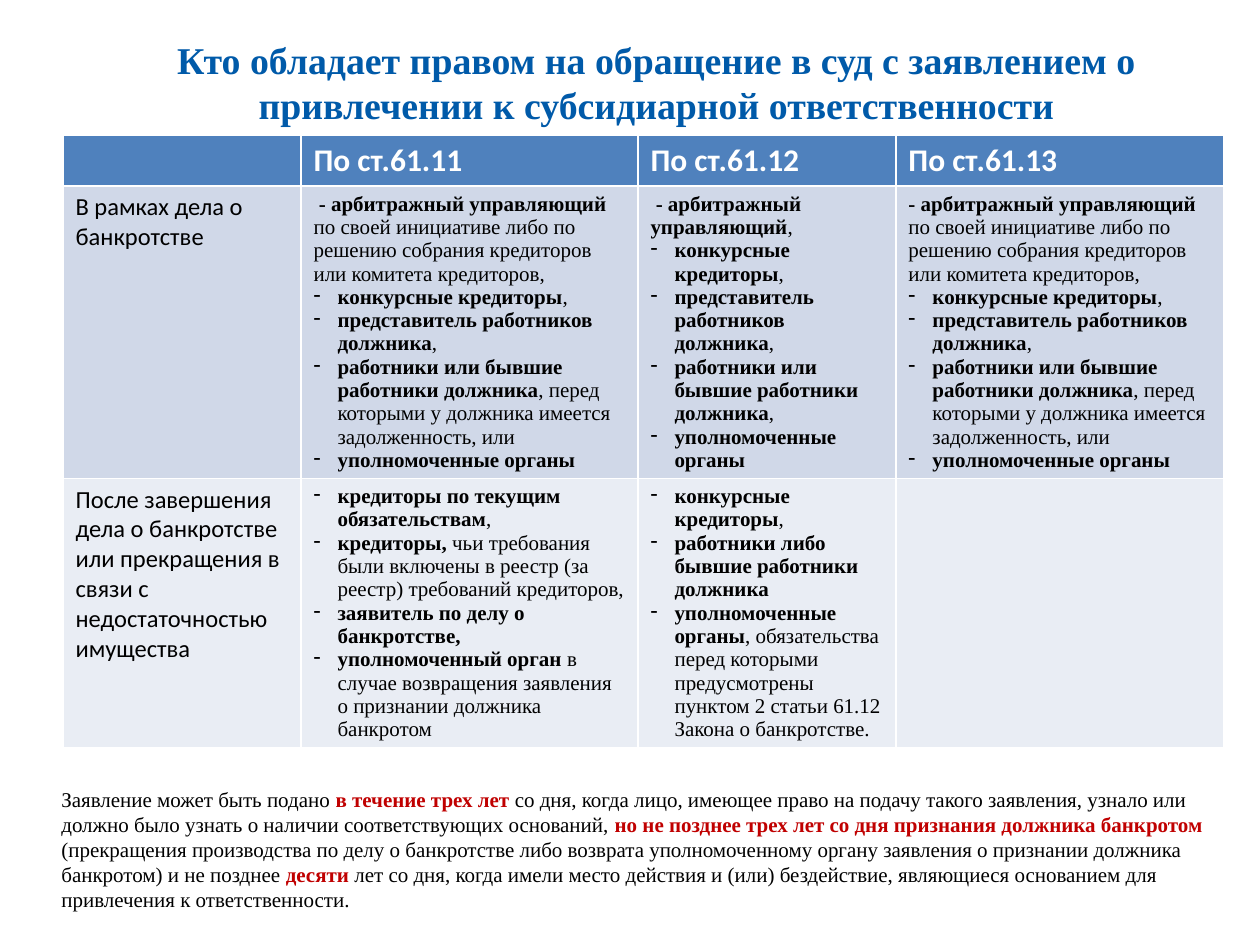
from pptx import Presentation
from pptx.dml.color import RGBColor
from pptx.enum.text import MSO_ANCHOR, MSO_AUTO_SIZE, PP_ALIGN
from pptx.oxml.ns import qn
from pptx.util import Pt
from lxml.etree import SubElement

SCALE = 914400 / 126
SERIF, SANS = "Times New Roman", "Calibri"
BLACK, WHITE, BLUE, RED = "000000", "FFFFFF", "005AA9", "C00000"
TITLE = {"name": SERIF, "size": Pt(21.6), "bold": True}
HEADER = {"name": SANS, "size": Pt(18), "bold": True}
STAGE = {"name": SANS, "size": Pt(14), "bold": False}
BODY = {"name": SERIF, "size": Pt(12), "bold": False}

COLUMNS = [238, 337, 258, 328]
ROWS = [51, 292, 269]
ROW_FILLS = ["4F81BD", "D0D8E8", "E9EDF4"]
HEADINGS = ["", "По ст.61.11", "По ст.61.12", "По ст.61.13"]
STAGES = [
    "В рамках дела о банкротстве",
    "После завершения дела о банкротстве или прекращения в связи с недостаточностью имущества",
]
INITIATIVE = "*- арбитражный управляющий* по своей инициативе либо по решению собрания кредиторов или комитета кредиторов,"
CREDITORS = "*конкурсные кредиторы*,"
DELEGATE = "*представитель работников должника*,"
WORKERS = "*работники или бывшие работники должника*,"
AGENCIES = "*уполномоченные органы*"
OWED = [CREDITORS, DELEGATE, WORKERS + " перед которыми у должника имеется задолженность, или", AGENCIES]
APPLICANTS = [
    [
        (" " + INITIATIVE, OWED),
        (" *- арбитражный управляющий*,", [CREDITORS, DELEGATE, WORKERS, AGENCIES]),
        (INITIATIVE, OWED),
    ],
    [
        ("", [
            "*кредиторы по текущим обязательствам*,",
            "*кредиторы, *чьи требования были включены в реестр (за реестр) требований кредиторов,",
            "*заявитель по делу о банкротстве,*",
            "*уполномоченный орган *в случае возвращения заявления о признании должника банкротом",
        ]),
        ("", [
            CREDITORS,
            "*работники либо бывшие работники должника*",
            AGENCIES + ", обязательства перед которыми предусмотрены пунктом 2 статьи 61.12 Закона о банкротстве.",
        ]),
        ("", []),
    ],
]
DEADLINE = (
    "Заявление может быть подано *в течение трех лет *со дня, когда лицо, имеющее право на подачу "
    "такого заявления, узнало или должно было узнать о наличии соответствующих оснований, "
    "*но не позднее трех лет со дня признания должника банкротом *(прекращения производства по делу "
    "о банкротстве либо возврата уполномоченному органу заявления о признании должника банкротом) "
    "и не позднее *десяти* лет со дня, когда имели место действия и (или) бездействие, являющиеся "
    "основанием для привлечения к ответственности."
)


def px(length):
    """Turn whole pixels into EMU."""
    return round(length * SCALE)


def color(value):
    """Turn a hex string into a colour."""
    return RGBColor.from_string(value)


def assign(target, values):
    """Set every attribute named in a dict of format values."""
    for name, value in values.items():
        setattr(target, name, value)


def place(left, top, width, height):
    """Give a position and size as attribute values."""
    return {"left": px(left), "top": px(top), "width": px(width), "height": px(height)}


class SlideBuilder:
    """Hold the style and the current slide."""

    def __init__(self, page):
        """Keep the page and its ink colour."""
        self.page = page
        self.ink = BLACK

    def text(self, para, wording, style, ink=None, accent=None):
        """Add text whose starred parts are bold."""
        ink = ink or self.ink
        for index, part in enumerate(wording.split("*")):
            if part:
                strong = index % 2 == 1
                span = para.add_run()
                span.text = part
                assign(span.font, style)
                if strong:
                    span.font.bold = True
                span.font.color.rgb = color(accent if strong and accent else ink)

    def title(self, wording, frame):
        """Fill and move the title placeholder."""
        box = self.page.shapes.title
        assign(box, place(*frame))
        assign(box.text_frame, {"word_wrap": True, "vertical_anchor": MSO_ANCHOR.MIDDLE})
        para = box.text_frame.paragraphs[0]
        para.alignment = PP_ALIGN.CENTER
        self.text(para, wording, TITLE, BLUE)

    def note(self, wording, frame):
        """Add a wrapped text box with red emphasis."""
        box = self.page.shapes.add_textbox(*place(*frame).values())
        assign(box.text_frame, {"word_wrap": True, "auto_size": MSO_AUTO_SIZE.SHAPE_TO_FIT_TEXT})
        self.text(box.text_frame.paragraphs[0], wording, BODY, accent=RED)

    def table(self, left, top, columns, rows, fills):
        """Add a table with one fill for each row."""
        frame = place(left, top, sum(columns), sum(rows))
        table = self.page.shapes.add_table(len(rows), len(columns), *frame.values()).table
        for column, width in zip(table.columns, columns):
            column.width = px(width)
        for row, height, fill in zip(table.rows, rows, fills):
            row.height = px(height)
            for cell in row.cells:
                cell.fill.solid()
                cell.fill.fore_color.rgb = color(fill)
        return table

    def dashes(self, cell, intro, items):
        """Add an optional opening line and a dashed list."""
        lines = [(intro, False)] if intro else []
        lines += [(item, True) for item in items]
        for index, (wording, dashed) in enumerate(lines):
            frame = cell.text_frame
            para = frame.add_paragraph() if index else frame.paragraphs[0]
            if dashed:
                self.dash(para)
            self.text(para, wording, BODY)

    def dash(self, para):
        """Give a paragraph a hanging dash."""
        settings = para._p.get_or_add_pPr()
        settings.set("marL", str(px(24)))
        settings.set("indent", str(-px(24)))
        SubElement(settings, qn("a:buChar")).set("char", "-")


def main():
    """Build the deck."""
    deck = Presentation()
    assign(deck, {"slide_width": px(1260), "slide_height": px(945)})
    builder = SlideBuilder(deck.slides.add_slide(deck.slide_layouts[5]))
    builder.title(
        "Кто обладает правом на обращение в суд с заявлением о привлечении к субсидиарной ответственности",
        (115, 27, 1083, 110),
    )
    table = builder.table(63, 135, COLUMNS, ROWS, ROW_FILLS)
    for column, heading in enumerate(HEADINGS):
        builder.text(table.cell(0, column).text_frame.paragraphs[0], heading, HEADER, WHITE)
    for row, (stage, groups) in enumerate(zip(STAGES, APPLICANTS), start=1):
        builder.text(table.cell(row, 0).text_frame.paragraphs[0], stage, STAGE)
        for column, (intro, items) in enumerate(groups, start=1):
            builder.dashes(table.cell(row, column), intro, items)
    builder.note(DEADLINE, (49, 780, 1171, 140))
    deck.save("out.pptx")


if __name__ == "__main__":
    main()
